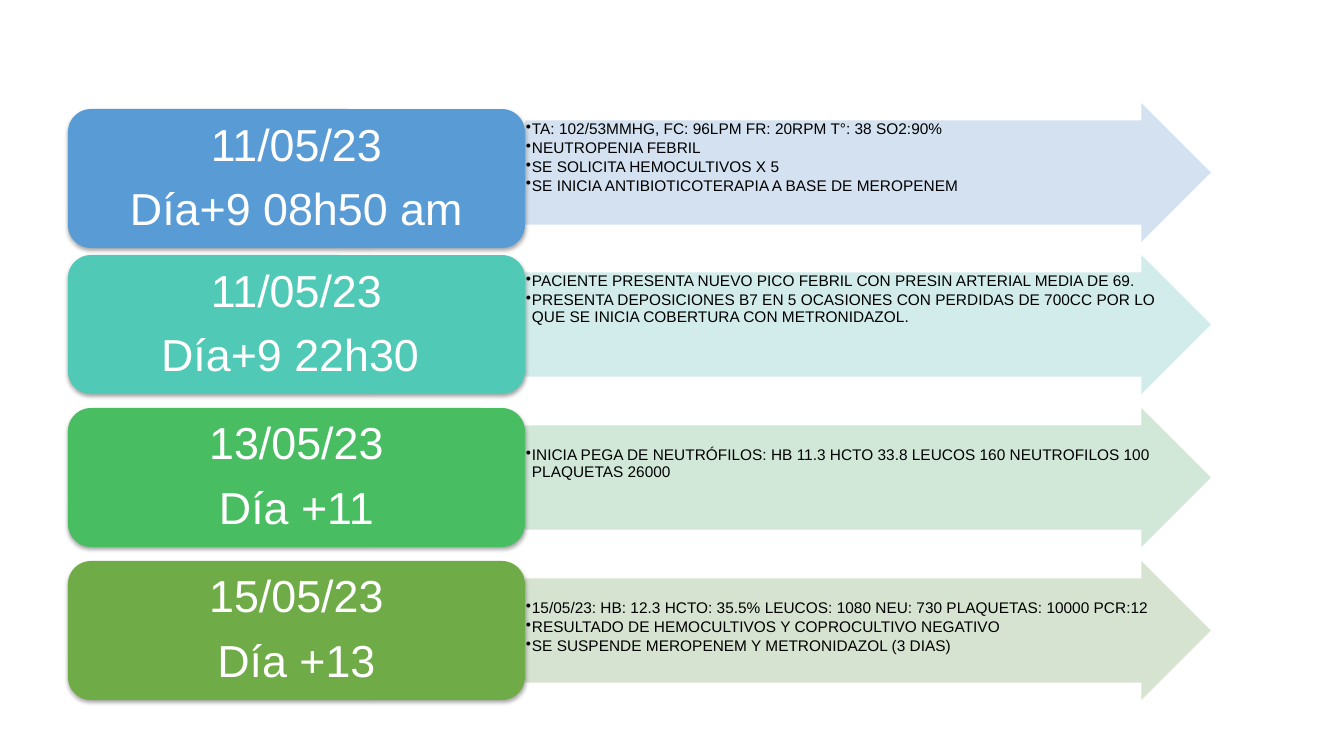
import lxml.etree
import pptx
import pptx.dml.color
import pptx.enum.shapes
import pptx.enum.text
import pptx.oxml.ns
import pptx.util

PX = 914400 / 100.8
COLORS = {
    "blue": "599BD5", "pale blue": "CFDEEF",
    "teal": "50C9B6", "pale teal": "CDEAE8",
    "green": "48BD62", "pale green": "CCE6D4",
    "olive": "6FAB46", "pale olive": "D3E1CC",
    "black": "000000", "white": "FFFFFF",
}
LABEL_LEFT, LABEL_WIDTH = 68, 457
ARROW_LEFT, ARROW_WIDTH = 525, 686
ROW_HEIGHT = 139

# label top, arrow top, arrow text inset at the top, color, label lines, events
ROWS = [
    (109, 103, 1, "blue", ["11/05/23", "Día+9 08h50 am"], [
        "TA: 102/53MMHG, FC: 96LPM FR: 20RPM T°: 38 SO2:90%",
        "NEUTROPENIA FEBRIL",
        "SE SOLICITA HEMOCULTIVOS X 5",
        "SE INICIA ANTIBIOTICOTERAPIA A BASE DE MEROPENEM"]),
    (255, 255, 1, "teal", ["11/05/23", "Día+9 22h30 "], [
        "PACIENTE PRESENTA NUEVO PICO FEBRIL CON PRESIN ARTERIAL MEDIA DE 69.",
        "PRESENTA DEPOSICIONES B7 EN 5 OCASIONES CON PERDIDAS DE 700CC POR LO "
        "QUE SE INICIA COBERTURA CON METRONIDAZOL."]),
    (408, 408, 22, "green", ["13/05/23", "Día +11"], [
        "INICIA PEGA DE NEUTRÓFILOS: HB 11.3 HCTO 33.8 LEUCOS 160 "
        "NEUTROFILOS 100 PLAQUETAS 26000"]),
    (561, 561, 22, "olive", ["15/05/23", "Día +13"], [
        "15/05/23: HB: 12.3 HCTO: 35.5% LEUCOS: 1080 NEU: 730 PLAQUETAS: 10000 PCR:12",
        "RESULTADO DE HEMOCULTIVOS Y COPROCULTIVO NEGATIVO",
        "SE SUSPENDE MEROPENEM Y METRONIDAZOL (3 DIAS)"]),
]


def add_block(kind, bounds, color, insets):
    """Add a filled shape without outline; bounds and insets are in px."""
    block = page.shapes.add_shape(kind, *[round(value * PX) for value in bounds])
    block.shadow.inherit = False
    block.fill.solid()
    block.fill.fore_color.rgb = pptx.dml.color.RGBColor.from_string(COLORS[color])
    block.line.fill.background()
    frame = block.text_frame
    frame.word_wrap = True
    frame.margin_left, frame.margin_top, frame.margin_right, frame.margin_bottom = [
        round(value * PX) for value in insets]
    return block


def write_lines(block, lines, size, color, gap, bulleted=False):
    frame = block.text_frame
    frame.text = "\n".join(lines)
    for index, para in enumerate(frame.paragraphs):
        if bulleted:
            properties = para._p.get_or_add_pPr()
            properties.set("marL", str(round(6 * PX)))
            properties.set("indent", str(round(-6 * PX)))
            lxml.etree.SubElement(properties, pptx.oxml.ns.qn("a:buChar")).set("char", "•")
        para.alignment = (pptx.enum.text.PP_ALIGN.LEFT if bulleted
                          else pptx.enum.text.PP_ALIGN.CENTER)
        para.line_spacing = 0.9
        para.space_before = pptx.util.Pt(gap if index else 0)
        for span in para.runs:
            span.font.name = "Arial"
            span.font.size = pptx.util.Pt(size)
            span.font.color.rgb = pptx.dml.color.RGBColor.from_string(COLORS[color])


deck = pptx.Presentation()
deck.slide_width, deck.slide_height = round(1344 * PX), round(756 * PX)
page = deck.slides.add_slide(deck.slide_layouts[6])

for label_top, arrow_top, text_inset, color, label_lines, events in ROWS:
    arrow = add_block(pptx.enum.shapes.MSO_SHAPE.RIGHT_ARROW,
                      (ARROW_LEFT, arrow_top, ARROW_WIDTH, ROW_HEIGHT),
                      "pale " + color, (1, text_inset, 1, 1))
    arrow.adjustments[0], arrow.adjustments[1] = 0.75, 0.5
    fill_color = arrow._element.spPr.find(".//" + pptx.oxml.ns.qn("a:srgbClr"))
    lxml.etree.SubElement(fill_color, pptx.oxml.ns.qn("a:alpha")).set("val", "90000")
    arrow.text_frame.vertical_anchor = pptx.enum.text.MSO_ANCHOR.TOP
    write_lines(arrow, events, 11, "black", 1.6, bulleted=True)

    label = add_block(pptx.enum.shapes.MSO_SHAPE.ROUNDED_RECTANGLE,
                      (LABEL_LEFT, label_top, LABEL_WIDTH, ROW_HEIGHT),
                      color, (13, 7, 13, 7))
    label.text_frame.vertical_anchor = pptx.enum.text.MSO_ANCHOR.MIDDLE
    write_lines(label, label_lines, 32, "white", 11.2)
    effects = label._element.spPr.find(pptx.oxml.ns.qn("a:effectLst"))
    shadow = lxml.etree.SubElement(
        effects, pptx.oxml.ns.qn("a:outerShdw"),
        {"blurRad": str(pptx.util.Pt(3.1)), "dist": str(pptx.util.Pt(1.8)),
         "dir": "5400000", "rotWithShape": "0"})
    shadow_color = lxml.etree.SubElement(
        shadow, pptx.oxml.ns.qn("a:srgbClr"), {"val": COLORS["black"]})
    lxml.etree.SubElement(shadow_color, pptx.oxml.ns.qn("a:alpha")).set("val", "35000")

deck.save("out.pptx")
